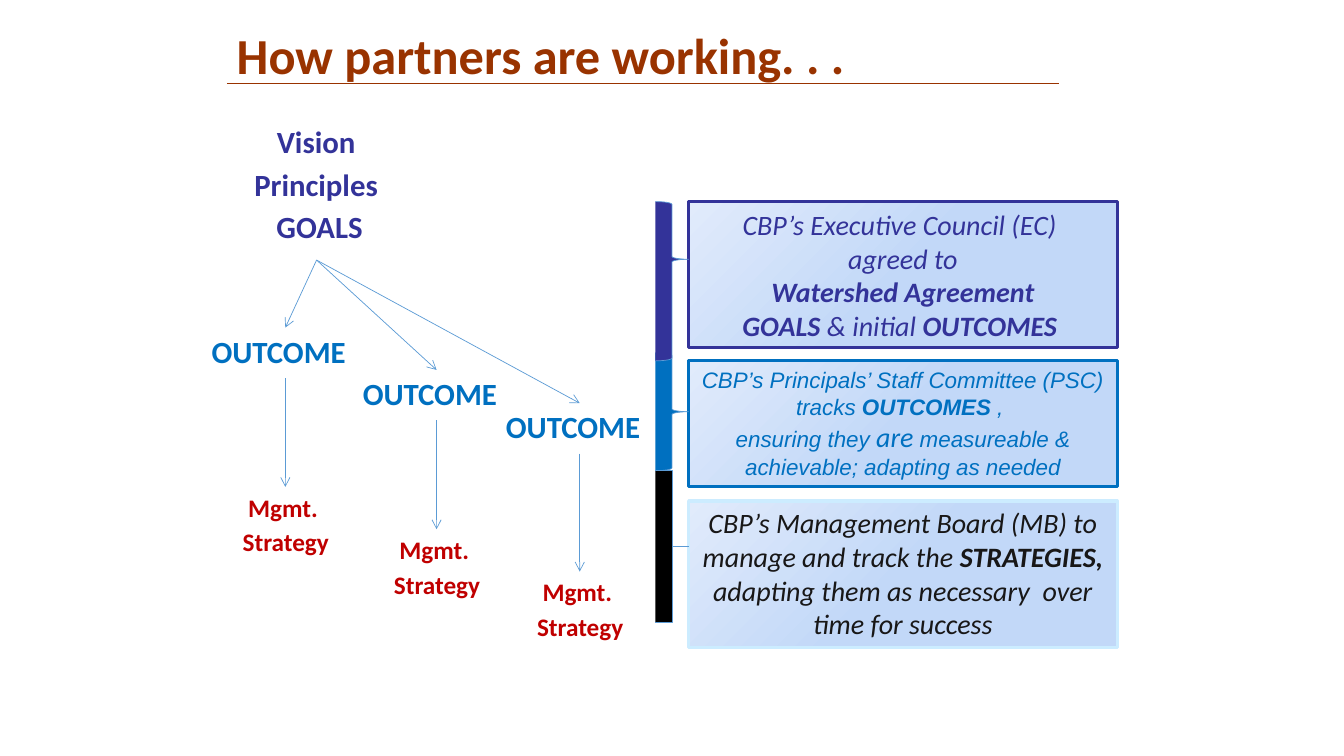
import pptx
import pptx.util
import pptx.dml.color
import pptx.enum.shapes
import pptx.enum.text
import pptx.oxml
import pptx.oxml.ns
from dataclasses import dataclass

Inches = pptx.util.Inches
Pt = pptx.util.Pt
Shapes = pptx.enum.shapes.MSO_SHAPE
Align = pptx.enum.text.PP_ALIGN
Anchor = pptx.enum.text.MSO_ANCHOR


@dataclass(frozen=True)
class Theme:
    title: str = "993300"
    goals: str = "333399"
    outcome: str = "0070C0"
    strategy: str = "C00000"
    board_text: str = "181717"
    board_edge: str = "CCECFF"
    board_brace: str = "000000"
    arrow: str = "5B9BD5"
    panel_mid: str = "C2D8F8"
    panel_light: str = "E1EBFB"
    font: str = "Calibri"
    committee_font: str = "Arial"
    title_size: int = 36
    heading_size: int = 22
    strategy_size: int = 18
    body_size: int = 20
    committee_size: int = 16
    thin: float = 0.5
    thick: float = 2.25
    paragraph_gap: float = 0.18


def rgb(value):
    return pptx.dml.color.RGBColor.from_string(value)


class SlideBuilder:
    def __init__(self, slide, theme):
        self.slide = slide
        self.theme = theme

    def fill_text(self, shape, paragraphs, style, align=Align.CENTER, anchor=Anchor.TOP, gap=0):
        frame = shape.text_frame
        for attribute, value in {"word_wrap": True, "vertical_anchor": anchor}.items():
            setattr(frame, attribute, value)
        for index, runs in enumerate(paragraphs):
            paragraph = frame.add_paragraph() if index else frame.paragraphs[0]
            paragraph.alignment = align
            if index and gap:
                paragraph.space_before = Pt(gap)
            for text, changes in runs:
                look = {"name": self.theme.font, **style, **changes}
                color = look.pop("color")
                look["size"] = Pt(look["size"])
                for part, line in enumerate(text.split("\n")):
                    if part:
                        paragraph.add_line_break()
                    run = paragraph.add_run()
                    run.text = line
                    run.font.color.rgb = rgb(color)
                    for attribute, value in look.items():
                        setattr(run.font, attribute, value)

    def label(self, box, lines, size, color, align=Align.LEFT):
        shape = self.slide.shapes.add_textbox(*map(Inches, box))
        style = {"size": size, "color": color, "bold": True}
        self.fill_text(shape, [[(line, {})] for line in lines], style, align,
                       gap=size * self.theme.paragraph_gap)

    def outlined(self, kind, box, edge, width):
        shape = self.slide.shapes.add_shape(kind, *map(Inches, box))
        shape.shadow.inherit = False
        shape.line.color.rgb = rgb(edge)
        shape.line.width = Pt(width)
        return shape

    def panel(self, top, height, edge, paragraphs, style, anchor=Anchor.TOP):
        shape = self.outlined(Shapes.RECTANGLE, (6.83, top, 4.25, height), edge, self.theme.thick)
        shape.fill.gradient()
        shape.fill.gradient_angle = 135
        stops = ((0.5, self.theme.panel_mid), (1, self.theme.panel_light))
        for stop, (position, color) in zip(shape.fill.gradient_stops, stops):
            stop.position = position
            stop.color.rgb = rgb(color)
        self.fill_text(shape, paragraphs, {"italic": True, **style}, anchor=anchor)

    def brace(self, top, height, color, curl, point):
        shape = self.outlined(Shapes.RIGHT_BRACE, (6.5, top, 0.33, height),
                              self.theme.arrow, self.theme.thin)
        shape.fill.solid()
        shape.fill.fore_color.rgb = rgb(color)
        shape.adjustments[0] = curl
        shape.adjustments[1] = point

    def line(self, start, end, color, arrow=False):
        connector = self.slide.shapes.add_connector(
            pptx.enum.shapes.MSO_CONNECTOR.STRAIGHT, *map(Inches, start + end))
        connector.line.color.rgb = rgb(color)
        connector.line.width = Pt(self.theme.thin)
        properties = connector._element.spPr
        namespace = pptx.oxml.ns.nsdecls("a")
        if arrow:
            outline = properties.find(pptx.oxml.ns.qn("a:ln"))
            outline.append(pptx.oxml.parse_xml(f'<a:tailEnd {namespace} type="arrow"/>'))
        properties.append(pptx.oxml.parse_xml(f"<a:effectLst {namespace}/>"))


def main():
    theme = Theme()
    deck = pptx.Presentation()
    for attribute, value in {"slide_width": 13.33, "slide_height": 7.5}.items():
        setattr(deck, attribute, Inches(value))
    page = SlideBuilder(deck.slides.add_slide(deck.slide_layouts[6]), theme)

    page.label((2.25, 0.19, 9, 0.83), ["How partners are working. . ."],
               theme.title_size, theme.title)
    page.line((2.25, 0.83), (10.5, 0.83), theme.title)
    page.label((2.23, 1.17, 1.81, 1.42), ["Vision", "Principles", " GOALS"],
               theme.heading_size, theme.goals, Align.CENTER)

    branches = ((2.83, 3.25, 4.83), (4.33, 3.67, 5.25), (5.75, 4, 5.67))
    for center, outcome_top, strategy_top in branches:
        page.label((center - 0.83, outcome_top, 1.67, 0.5), ["OUTCOME"],
                   theme.heading_size, theme.outcome)
        page.label((center - 0.66, strategy_top, 1.33, 0.75), ["Mgmt. ", "Strategy"],
                   theme.strategy_size, theme.strategy, Align.CENTER)
        page.line((3.14, 2.58), (center, outcome_top), theme.arrow, arrow=True)
        page.line((center, outcome_top + 0.5), (center, strategy_top), theme.arrow, arrow=True)

    bold = {"bold": True}
    page.panel(2, 1.45, theme.goals, [
        [("CBP’s Executive Council (EC) \nagreed to", {})],
        [("Watershed Agreement", bold)],
        [("GOALS ", bold), ("& initial ", {}), ("OUTCOMES ", bold)],
    ], {"size": theme.body_size, "color": theme.goals}, Anchor.MIDDLE)
    page.panel(3.58, 1.25, theme.outcome, [
        [("CBP’s Principals’ Staff Committee (PSC) tracks ", {}), ("OUTCOMES", bold), (" , ", {})],
        [("ensuring they ", {}), ("are", {"size": theme.body_size, "name": theme.font}),
         (" measureable & achievable; adapting as needed", {})],
    ], {"size": theme.committee_size, "color": theme.outcome, "name": theme.committee_font})
    page.panel(4.97, 1.45, theme.board_edge, [
        [("CBP’s Management Board (MB) to manage and track the ", {}), ("STRATEGIES, ", bold),
         ("adapting them as necessary  over time for success", {})],
    ], {"size": theme.body_size, "color": theme.board_text})

    page.brace(3.5, 1.17, theme.outcome, 0.083, 0.5)
    page.brace(2, 1.58, theme.goals, 0.083, 0.362)
    page.brace(4.67, 1.5, theme.board_brace, 0, 0.5)

    deck.save("out.pptx")


if __name__ == "__main__":
    main()
